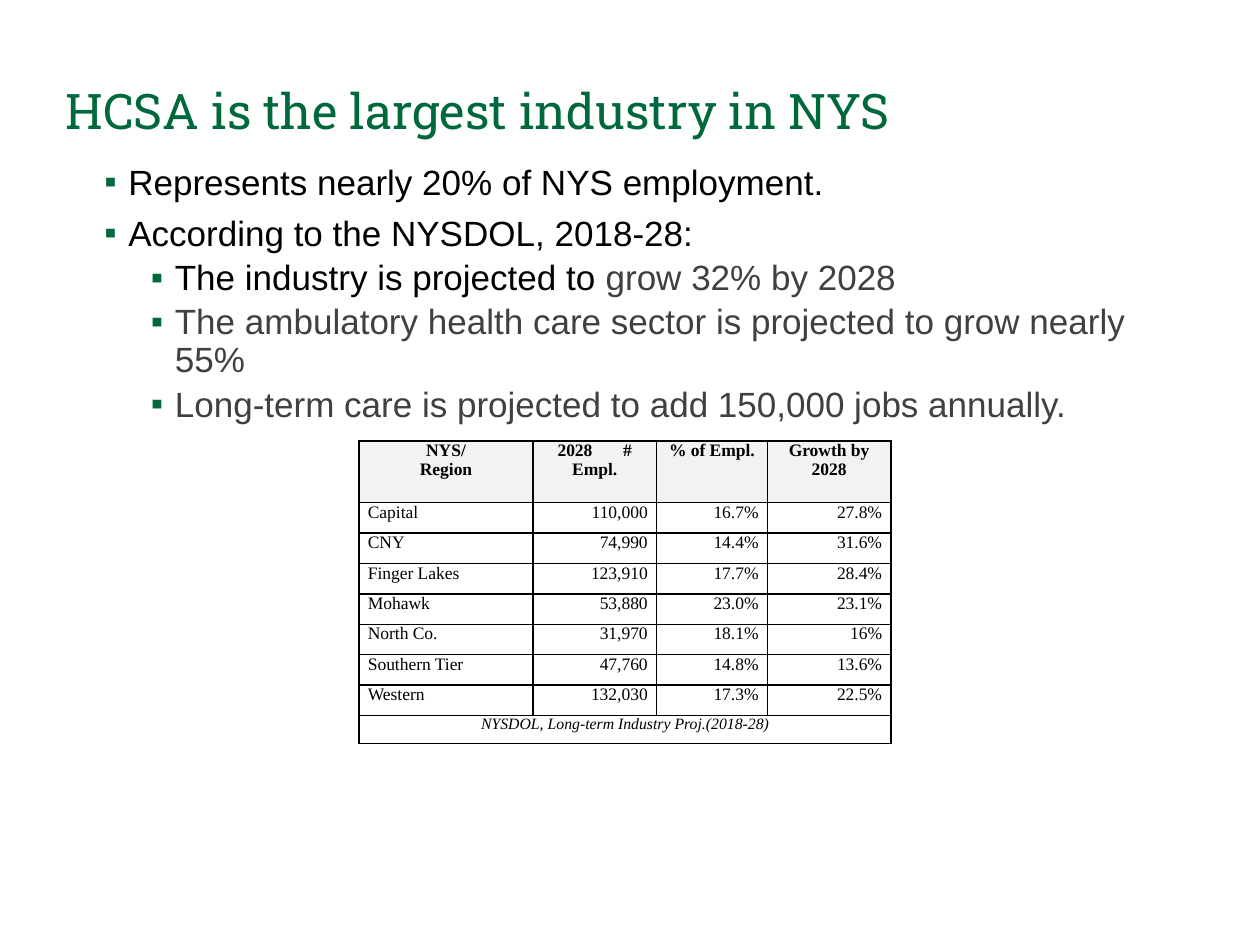
from dataclasses import dataclass

import pptx
import pptx.dml.color
import pptx.enum.text
import pptx.oxml
import pptx.oxml.ns
import pptx.util

Inches = pptx.util.Inches
Pt = pptx.util.Pt
ALIGN = pptx.enum.text.PP_ALIGN
GREEN, BLACK, GRAY = "00693B", "000000", "404040"
SERIF = "Times New Roman"


@dataclass
class Bullet:
    runs: list[tuple[str, str]]
    indent: float
    before: float


BULLETS = [
    Bullet([("Represents nearly 20% of NYS employment.", BLACK)], 0.19, 0),
    Bullet([("According to the NYSDOL, 2018-28:", BLACK)], 0.19, 7.5),
    Bullet([("The industry is projected to", BLACK), (" grow 32% by 2028", GRAY)], 0.56, 3.8),
    Bullet([("The ambulatory health care sector is projected to grow nearly 55%", GRAY)], 0.56, 3.8),
    Bullet([("Long-term care is projected to add 150,000 jobs annually.", GRAY)], 0.56, 3.8),
]
HEADER = ["NYS/\vRegion", "2028\t#\vEmpl.", "% of Empl.", "Growth by 2028"]
REGIONS = [
    ("Capital", "110,000", "16.7%", "27.8%"),
    ("CNY", "74,990", "14.4%", "31.6%"),
    ("Finger Lakes", "123,910", "17.7%", "28.4%"),
    ("Mohawk", "53,880", "23.0%", "23.1%"),
    ("North Co.", "31,970", "18.1%", "16%"),
    ("Southern Tier", "47,760", "14.8%", "13.6%"),
    ("Western", "132,030", "17.3%", "22.5%"),
]
SOURCE = "NYSDOL, Long-term Industry Proj.(2018-28)"


def rgb(color: str):
    return pptx.dml.color.RGBColor.from_string(color)


def xml(markup: str):
    head, tail = markup.split(" ", 1)
    return pptx.oxml.parse_xml(f"{head} {pptx.oxml.ns.nsdecls('a')} {tail}")


def add_text(p, text: str, *, size: float, font: str, color: str = BLACK,
             bold: bool = False, italic: bool = False) -> None:
    for i, line in enumerate(text.split("\v")):
        if i:
            p.add_line_break()
        r = p.add_run()
        r.text = line
        r.font.size, r.font.name = Pt(size), font
        r.font.bold, r.font.italic = bold, italic
        r.font.color.rgb = rgb(color)


def add_box(s, left: float, top: float, width: float, height: float):
    tf = s.shapes.add_textbox(Inches(left), Inches(top), Inches(width), Inches(height)).text_frame
    tf.word_wrap = True
    return tf


def add_bullet(p, bullet: Bullet) -> None:
    p.line_spacing = 0.9
    if bullet.before:
        p.space_before = Pt(bullet.before)
    pPr = p._p.get_or_add_pPr()
    pPr.set("marL", str(Inches(bullet.indent)))
    pPr.set("indent", str(Inches(-0.19)))
    pPr.append(xml(f'<a:buClr ><a:srgbClr val="{GREEN}"/></a:buClr>'))
    pPr.append(xml('<a:buFont typeface="Arial"/>'))
    pPr.append(xml('<a:buChar char="▪"/>'))
    for text, color in bullet.runs:
        add_text(p, text, size=20, font="Arial", color=color)


def style_cell(cell, fill: str) -> None:
    cell.margin_left = cell.margin_right = Inches(0.07)
    cell.margin_top = cell.margin_bottom = 0
    cell.fill.solid()
    cell.fill.fore_color.rgb = rgb(fill)
    for i, side in enumerate("LRTB"):
        border = xml(f'<a:ln{side} w="{Pt(1)}"><a:solidFill><a:srgbClr val="{BLACK}"/>'
                     f'</a:solidFill></a:ln{side}>')
        cell._tc.get_or_add_tcPr().insert(i, border)


def fill_cell(cell, text: str, align, size: float = 10, **style) -> None:
    p = cell.text_frame.paragraphs[0]
    p.alignment = align
    if "\t" in text:
        stop = f'<a:tabLst ><a:tab pos="{Inches(0.52)}" algn="l"/></a:tabLst>'
        p._p.get_or_add_pPr().append(xml(stop))
    add_text(p, text, size=size, font=SERIF, **style)


def add_region_table(s) -> None:
    widths = [1.38, 0.98, 0.88, 0.98]
    last = len(REGIONS) + 1
    frame = s.shapes.add_table(last + 1, len(widths), Inches(2.85), Inches(3.5),
                               Inches(4.23), Inches(2.4))
    table = frame.table
    table.first_row = table.horz_banding = False
    for column, width in zip(table.columns, widths):
        column.width = Inches(width)
    region_height = (2.4 - 0.49 - 0.22) / len(REGIONS)
    for row, height in zip(table.rows, [0.49] + [region_height] * len(REGIONS) + [0.22]):
        row.height = Inches(height)
    for i in range(last + 1):
        for j in range(len(widths)):
            style_cell(table.cell(i, j), "FFFFFF" if i else "F2F2F2")
    for j, text in enumerate(HEADER):
        fill_cell(table.cell(0, j), text, ALIGN.CENTER, bold=True)
    for i, region in enumerate(REGIONS, 1):
        for j, text in enumerate(region):
            fill_cell(table.cell(i, j), text, ALIGN.RIGHT if j else ALIGN.LEFT)
    table.cell(last, 0).merge(table.cell(last, len(widths) - 1))
    fill_cell(table.cell(last, 0), SOURCE, ALIGN.CENTER, size=9, italic=True)


def main() -> None:
    prs = pptx.Presentation()
    prs.slide_width, prs.slide_height = Inches(10), Inches(7.5)
    s = prs.slides.add_slide(prs.slide_layouts[6])

    tf = add_box(s, 0.73, 1.26, 8.77, 4.87)
    for i, bullet in enumerate(BULLETS):
        add_bullet(tf.add_paragraph() if i else tf.paragraphs[0], bullet)

    p = add_box(s, 0.42, 0.64, 7.41, 0.41).paragraphs[0]
    p.line_spacing = 0.9
    add_text(p, "HCSA is the largest industry in NYS", size=28, font="Roboto Slab", color=GREEN)

    add_region_table(s)
    prs.save("out.pptx")


if __name__ == "__main__":
    main()
